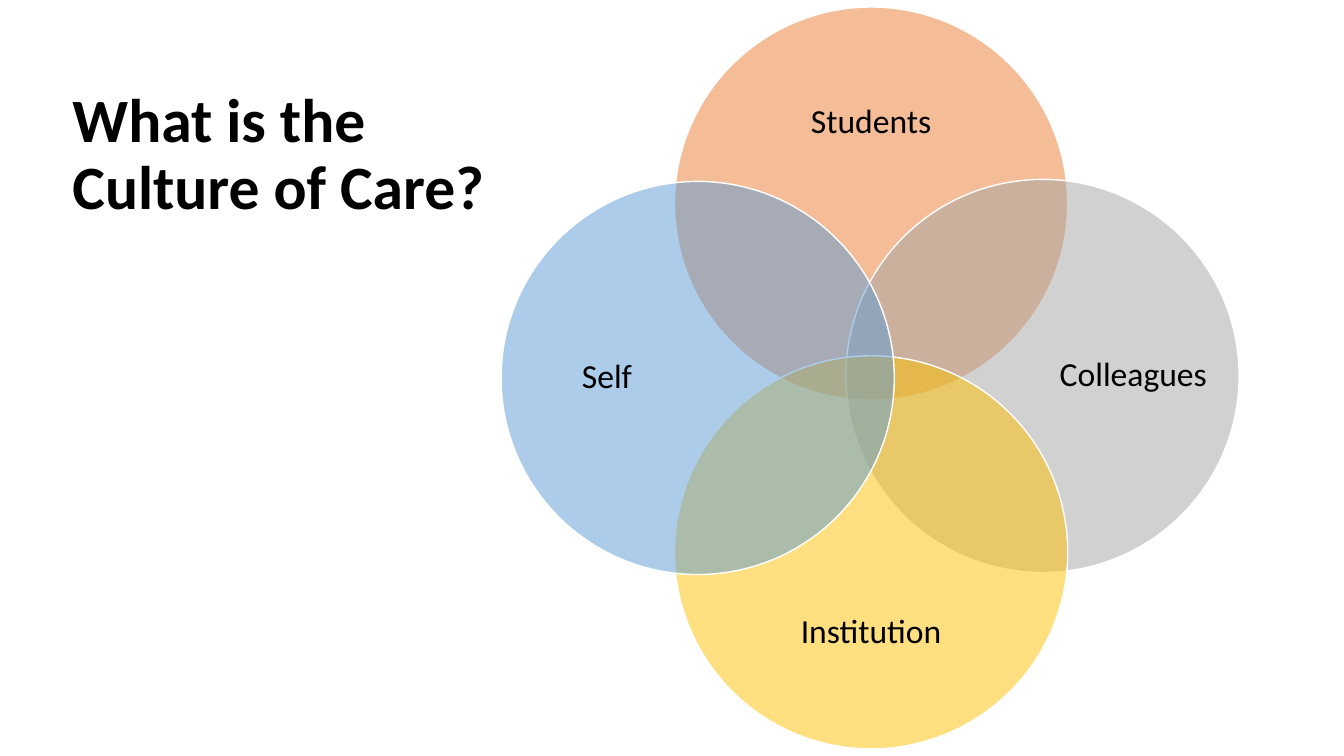
from lxml.etree import SubElement
from pptx import Presentation
from pptx.dml.color import RGBColor
from pptx.enum.shapes import MSO_SHAPE
from pptx.enum.text import MSO_ANCHOR, PP_ALIGN
from pptx.oxml.ns import qn
from pptx.util import Inches, Pt

COLORS = {
    "text": "000000",
    "outline": "FFFFFF",
    "students": "ED7D31",
    "colleagues": "A5A5A5",
    "institution": "FFC000",
    "self": "5B9BD5",
}
DIAMETER = 3.9
WIDE_LABEL = (3, 1.24)
TALL_LABEL = (1.5, 3)

# Each entry: label, color, circle offset in the diagram, label offset in the circle, label size
CIRCLES = [
    ("Students", "students", (1.72, 0), (0.45, 0.53), WIDE_LABEL),
    ("Colleagues", "colleagues", (3.42, 1.71), (2.1, 0.45), TALL_LABEL),
    ("Institution", "institution", (1.72, 3.46), (0.45, 2.13), WIDE_LABEL),
    ("Self", "self", (0, 1.73), (0.3, 0.45), TALL_LABEL),
]


def rgb(name):
    """Return the named palette color."""
    return RGBColor.from_string(COLORS[name])


def add_text(shapes, text, x, y, w, h, *, size, bold=False, align=PP_ALIGN.LEFT,
             anchor=MSO_ANCHOR.TOP, inset=(0.1, 0.05)):
    """Add a wrapped one-paragraph text box."""
    tf = shapes.add_textbox(Inches(x), Inches(y), Inches(w), Inches(h)).text_frame
    tf.word_wrap = True
    tf.vertical_anchor = anchor
    tf.margin_left = tf.margin_right = Inches(inset[0])
    tf.margin_top = tf.margin_bottom = Inches(inset[1])
    p = tf.paragraphs[0]
    p.alignment = align
    p.line_spacing = 0.9
    r = p.add_run()
    r.text = text
    r.font.name = "Calibri"
    r.font.size = Pt(size)
    r.font.bold = bold
    r.font.color.rgb = rgb("text")


def add_circle(shapes, color, x, y):
    """Add a half-transparent circle."""
    s = shapes.add_shape(MSO_SHAPE.OVAL, Inches(x), Inches(y), Inches(DIAMETER), Inches(DIAMETER))
    s.shadow.inherit = False
    s.fill.solid()
    s.fill.fore_color.rgb = rgb(color)
    clr = s.fill._xPr.find(qn("a:solidFill")).find(qn("a:srgbClr"))
    SubElement(clr, qn("a:alpha"), val="50000")
    s.line.color.rgb = rgb("outline")
    s.line.width = Pt(1)


def add_title(slide, x, y, w, h):
    """Place the slide title in its box."""
    add_text(slide.shapes, "What is the Culture of Care?", x, y, w, h, size=44, bold=True)


def add_venn(slide, x, y):
    """Place four overlapping labelled circles from the top left corner."""
    shapes = slide.shapes.add_group_shape().shapes
    for label, color, (dx, dy), (lx, ly), (w, h) in CIRCLES:
        cx, cy = x + dx, y + dy
        add_circle(shapes, color, cx, cy)
        add_text(shapes, label, cx + lx, cy + ly, w, h, size=24, align=PP_ALIGN.CENTER,
                 anchor=MSO_ANCHOR.MIDDLE, inset=(0, 0))


def main():
    """Build and save the slide."""
    prs = Presentation()
    prs.slide_width, prs.slide_height = Inches(13.33), Inches(7.5)
    slide = prs.slides.add_slide(prs.slide_layouts[6])
    add_title(slide, 0.62, 0.84, 4.52, 3.71)
    add_venn(slide, 4.97, 0.07)
    prs.save("out.pptx")


if __name__ == "__main__":
    main()
